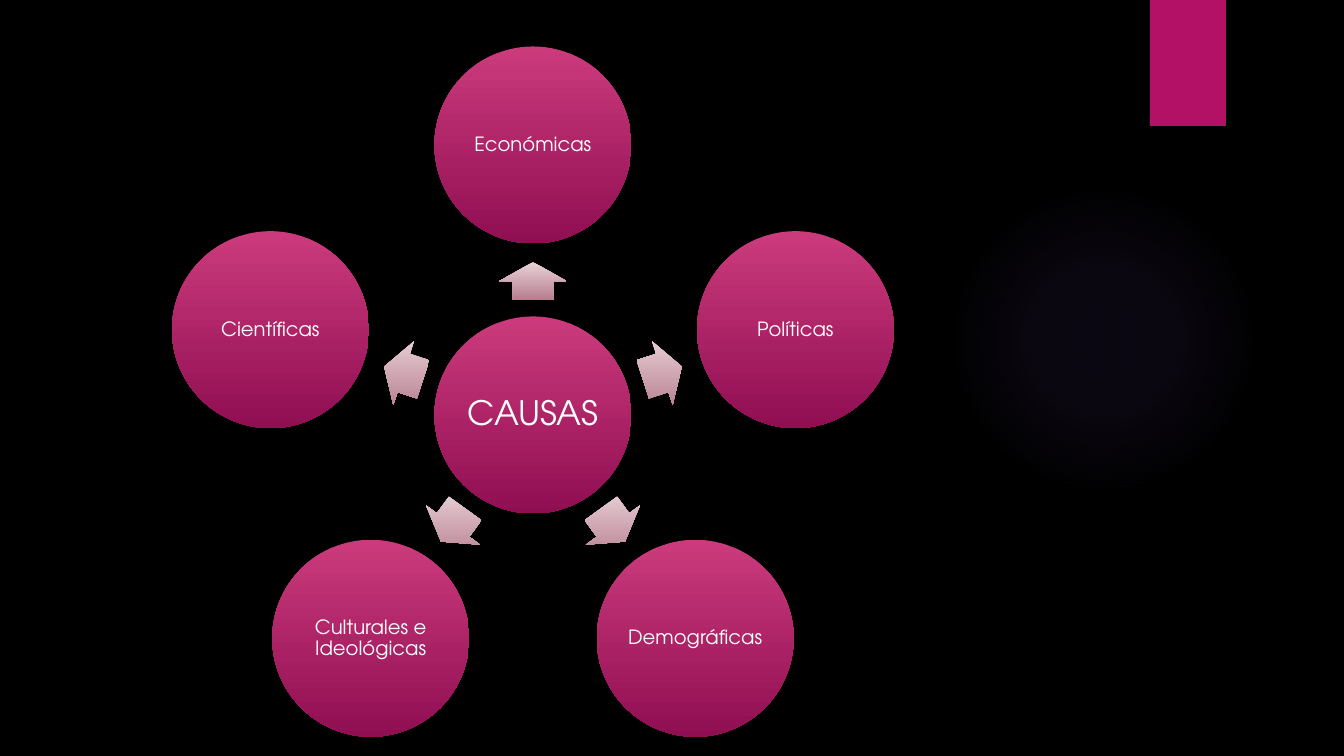
import math
from dataclasses import dataclass

from lxml import etree
from pptx import Presentation
from pptx import util as u
from pptx.dml.color import RGBColor
from pptx.enum import shapes, text
from pptx.oxml import ns

SCALE = 914400 / 100.8  # EMU in one px


def px(length):
    return u.Emu(round(length * SCALE))


@dataclass
class Theme:
    font: str = "TeX Gyre Adventor"
    background: str = "000000"
    label: str = "FFFFFF"
    tab: str = "B31166"
    # Gradient stops: position %, colour, opacity %
    circle: tuple = ((0, "CB3B7C", 100), (100, "900E52", 100))
    arrow: tuple = ((0, "E9D2D9", 100), (100, "B77E8F", 100))
    glow: tuple = ((0, "9B6BF2", 7), (36, "9B6BF2", 6), (69, "9B6BF2", 0))
    hub_size: int = 24
    label_size: int = 14


class Canvas:
    """Draws styled elements on the current slide."""

    def __init__(self, page, theme):
        self.page = page
        self.theme = theme
        fill = page.background.fill
        fill.solid()
        fill.fore_color.rgb = RGBColor.from_string(theme.background)

    def shape(self, kind, centre, size):
        (x, y), (width, height) = centre, size
        shape = self.page.shapes.add_shape(
            kind, px(x - width / 2), px(y - height / 2), px(width), px(height))
        shape.shadow.inherit = False
        shape.line.fill.background()
        return shape

    def gradient(self, shape, stops, radial=False):
        shape.fill.background()
        empty = shape._element.spPr.find(ns.qn("a:noFill"))
        grad = etree.Element(ns.qn("a:gradFill"), rotWithShape="0")
        stop_list = etree.SubElement(grad, ns.qn("a:gsLst"))
        for position, colour, opacity in stops:
            stop = etree.SubElement(stop_list, ns.qn("a:gs"), pos=str(position * 1000))
            tint = etree.SubElement(stop, ns.qn("a:srgbClr"), val=colour)
            if opacity < 100:
                etree.SubElement(tint, ns.qn("a:alpha"), val=str(opacity * 1000))
        if radial:
            path = etree.SubElement(grad, ns.qn("a:path"), {"path": "circle"})
            etree.SubElement(path, ns.qn("a:fillToRect"),
                             {side: "50000" for side in "ltrb"})
        else:
            etree.SubElement(grad, ns.qn("a:lin"), ang="5400000", scaled="0")
        empty.getparent().replace(empty, grad)

    def glow(self, centre, diameter):
        shape = self.shape(shapes.MSO_SHAPE.OVAL, centre, (diameter, diameter))
        self.gradient(shape, self.theme.glow, radial=True)

    def tab(self, centre, size):
        shape = self.shape(shapes.MSO_SHAPE.RECTANGLE, centre, size)
        shape.fill.solid()
        shape.fill.fore_color.rgb = RGBColor.from_string(self.theme.tab)

    def circle(self, centre, diameter, label, size):
        shape = self.shape(shapes.MSO_SHAPE.OVAL, centre, (diameter, diameter))
        self.gradient(shape, self.theme.circle)
        frame = shape.text_frame
        frame.word_wrap = True
        frame.vertical_anchor = text.MSO_ANCHOR.MIDDLE
        frame.margin_left = frame.margin_right = px(2)
        frame.margin_top = frame.margin_bottom = px(2)
        para = frame.paragraphs[0]
        para.alignment = text.PP_ALIGN.CENTER
        para.line_spacing = 0.9
        span = para.add_run()
        span.text = label
        span.font.name = self.theme.font
        span.font.size = u.Pt(size)
        span.font.color.rgb = RGBColor.from_string(self.theme.label)

    def arrow(self, centre, size, angle):
        shape = self.shape(shapes.MSO_SHAPE.RIGHT_ARROW, centre, size)
        shape.adjustments[0] = 0.6
        shape.adjustments[1] = 0.5
        shape.rotation = angle % 360
        self.gradient(shape, self.theme.arrow)


HUB = (533, 415)
DIAMETER = 197
# Label, circle distance, arrow distance, arrow length; clockwise from the top
CAUSES = [
    ("Económicas", 270, 134, 38),
    ("Políticas", 276, 136, 41),
    ("Demográficas", 276, 136, 41),
    ("Culturales e Ideológicas", 276, 136, 41),
    ("Científicas", 276, 136, 41),
]


def around_hub(distance, angle):
    turn = math.radians(angle)
    return HUB[0] + distance * math.cos(turn), HUB[1] + distance * math.sin(turn)


def main():
    deck = Presentation()
    deck.slide_width, deck.slide_height = px(1344), px(756)
    theme = Theme()
    canvas = Canvas(deck.slides.add_slide(deck.slide_layouts[6]), theme)

    # Backdrop
    canvas.glow((1104, 340), 310)
    canvas.tab((1188, 63), (76, 126))

    # Hub with the causes around it
    canvas.circle(HUB, DIAMETER, "CAUSAS", theme.hub_size)
    for index, (label, reach, arrow_reach, length) in enumerate(CAUSES):
        angle = index * 360 / len(CAUSES) - 90
        canvas.arrow(around_hub(arrow_reach, angle), (length, 67), angle)
        canvas.circle(around_hub(reach, angle), DIAMETER, label, theme.label_size)

    deck.save("out.pptx")


if __name__ == "__main__":
    main()
